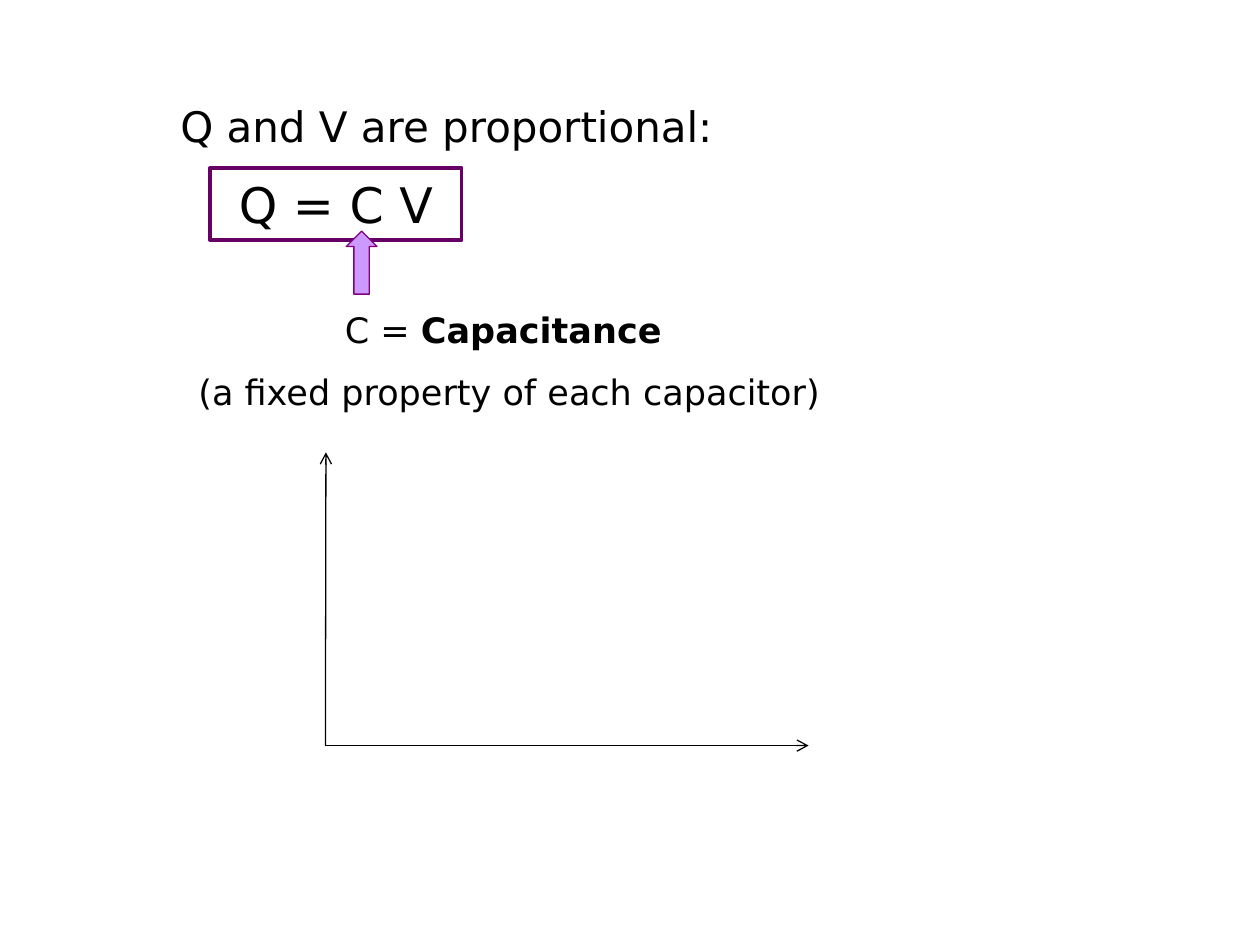
import pptx
import pptx.dml.color
import pptx.enum.shapes
import pptx.enum.text
import pptx.oxml
import pptx.oxml.ns
import pptx.util
from pptx.util import Cm, Pt

COLORS = {"ink": "000000", "frame": "660066", "arrow": "CC99FF", "arrow_edge": "800080"}
ALIGN = pptx.enum.text.PP_ALIGN
SHAPES = pptx.enum.shapes.MSO_SHAPE


def color(name):
    return pptx.dml.color.RGBColor.from_string(COLORS[name])


class Page:
    font = "DejaVu Sans"

    def __init__(self, deck):
        title_only = deck.slide_layouts[5]
        self.slide = deck.slides.add_slide(title_only)

    def style(self, span, size, bold=False):
        span.font.name = self.font
        span.font.size = Pt(size)
        span.font.bold = bold
        span.font.color.rgb = color("ink")

    def prepare(self, frame, anchor=pptx.enum.text.MSO_ANCHOR.TOP):
        frame.word_wrap = True
        frame.auto_size = pptx.enum.text.MSO_AUTO_SIZE.NONE
        frame.vertical_anchor = anchor

    def title(self, text, left, top, width, height, size):
        box = self.slide.shapes.title
        box.left, box.top, box.width, box.height = map(Cm, (left, top, width, height))
        self.prepare(box.text_frame)
        box.text_frame.text = text
        para = box.text_frame.paragraphs[0]
        para.alignment = ALIGN.LEFT
        self.style(para.runs[0], size)

    def shape(self, kind, left, top, width, height, line, line_width, fill=None):
        shape = self.slide.shapes.add_shape(kind, *map(Cm, (left, top, width, height)))
        shape.shadow.inherit = False
        if fill:
            shape.fill.solid()
            shape.fill.fore_color.rgb = color(fill)
        else:
            shape.fill.background()
        shape.line.color.rgb = color(line)
        shape.line.width = Pt(line_width)
        return shape

    def formula(self, text, left, top, width, height, size):
        box = self.shape(SHAPES.RECTANGLE, left, top, width, height, "frame", 2)
        self.prepare(box.text_frame, pptx.enum.text.MSO_ANCHOR.MIDDLE)
        box.text_frame.text = text
        para = box.text_frame.paragraphs[0]
        para.alignment = ALIGN.CENTER
        self.style(para.runs[0], size)

    def text(self, lines, left, top, width, height, size):
        """Add centred lines, each a list of (text, bold) spans."""
        box = self.slide.shapes.add_textbox(*map(Cm, (left, top, width, height)))
        frame = box.text_frame
        self.prepare(frame)
        for index, spans in enumerate(lines):
            para = frame.add_paragraph() if index else frame.paragraphs[0]
            para.alignment = ALIGN.CENTER
            if index:
                para.space_before = Pt(11)
            for words, bold in spans:
                span = para.add_run()
                span.text = words
                self.style(span, size, bold)

    def axis(self, start, end):
        """Draw a thin line with an open arrowhead at its end."""
        line = self.slide.shapes.add_connector(
            pptx.enum.shapes.MSO_CONNECTOR.STRAIGHT, *map(Cm, start + end))
        line.line.color.rgb = color("ink")
        line.line.width = Pt(0.75)
        properties = line._element.spPr
        namespace = pptx.oxml.ns.nsdecls("a")
        properties.get_or_add_ln().append(
            pptx.oxml.parse_xml(f'<a:tailEnd {namespace} type="arrow"/>'))
        properties.append(pptx.oxml.parse_xml(f"<a:effectLst {namespace}/>"))


def main():
    deck = pptx.Presentation()
    deck.slide_width, deck.slide_height = Cm(25.4), Cm(19.05)
    page = Page(deck)
    page.title("Q and V are proportional:", 3.38, 1.9, 16.08, 1.27, 24)
    page.formula("Q = C V", 4.23, 3.39, 5.08, 1.45, 28)
    page.shape(SHAPES.UP_ARROW, 6.98, 4.66, 0.62, 1.27, "arrow_edge", 0.75, "arrow")
    page.text(
        [[("C = ", False), ("Capacitance ", True)],
         [(" (a fixed property of each capacitor) ", False)]],
        2.33, 6.1, 15.88, 2.36, 20)
    origin = (6.56, 15.03)
    page.axis(origin, (16.3, 15.03))
    page.axis(origin, (6.57, 9.12))
    deck.save("out.pptx")


if __name__ == "__main__":
    main()
